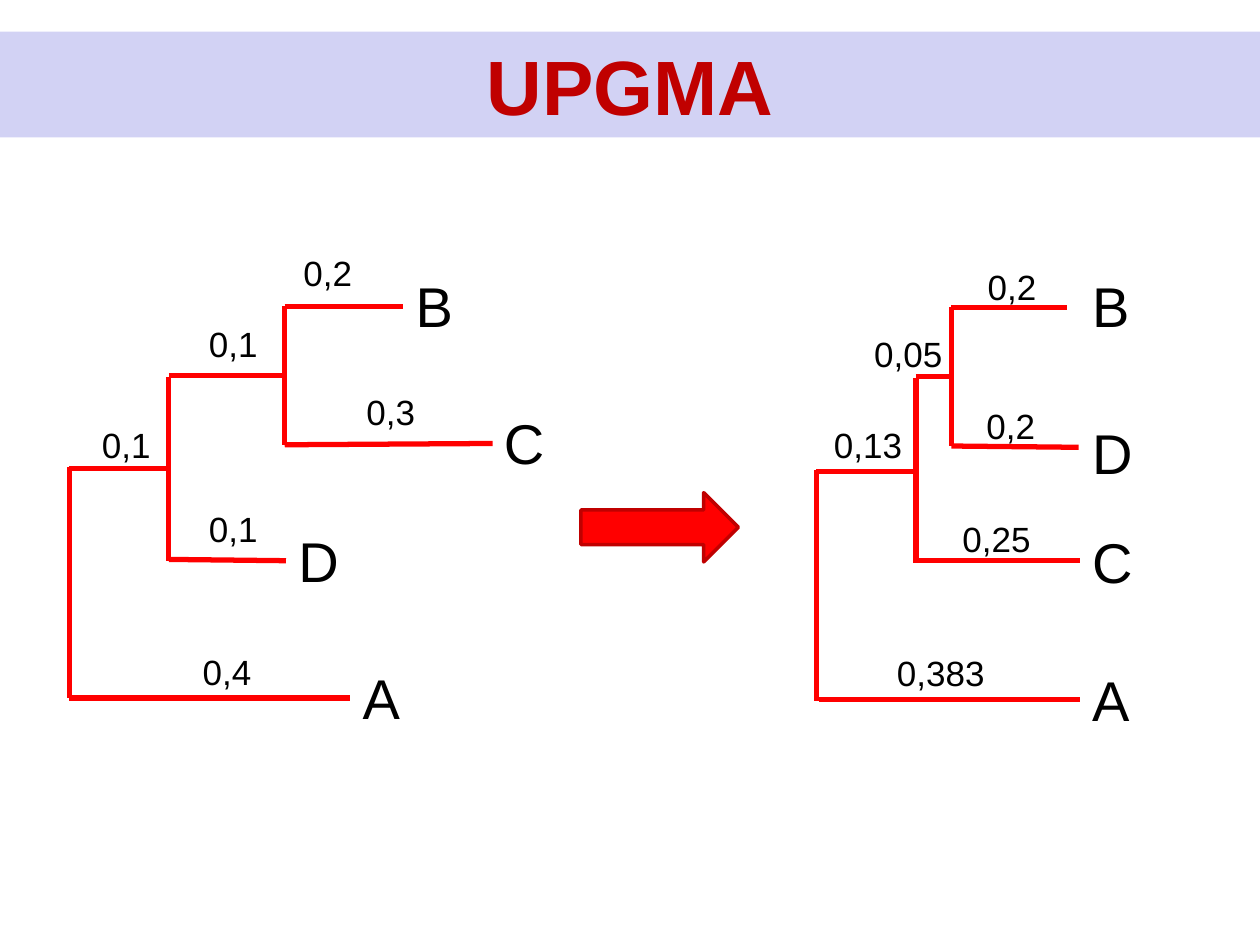
from lxml.etree import SubElement
from pptx import Presentation
from pptx.dml.color import RGBColor
from pptx.enum.shapes import MSO_CONNECTOR, MSO_SHAPE
from pptx.enum.text import MSO_ANCHOR, PP_ALIGN
from pptx.oxml.ns import qn
from pptx.util import Inches, Pt

COLORS = {"band": "D2D2F4", "title": "C00000", "branch": "FF0000", "text": "000000"}

LEFT_TREE = {
    "branches": [
        (2.26, 2.43, 3.2, 2.43), (2.26, 2.43, 2.26, 3.53), (2.26, 3.53, 3.91, 3.52),
        (1.34, 4.44, 2.27, 4.45), (1.34, 2.98, 2.26, 2.98), (1.34, 2.99, 1.34, 4.45),
        (0.55, 3.72, 1.34, 3.72), (0.55, 3.71, 0.55, 5.54), (0.55, 5.54, 2.78, 5.54),
    ],
    "leaves": [("C", 3.9, 3.19), ("B", 3.2, 2.11), ("D", 2.27, 4.13), ("A", 2.78, 5.22)],
    "lengths": [
        ("0,2", 2.31, 1.95, 0.59), ("0,3", 2.81, 3.05, 0.59), ("0,1", 1.56, 3.98, 0.59),
        ("0,1", 1.56, 2.51, 0.59), ("0,4", 1.51, 5.11, 0.59), ("0,1", 0.71, 3.31, 0.59),
    ],
}
RIGHT_TREE = {
    "branches": [
        (7.55, 2.44, 8.47, 2.44), (7.55, 2.44, 7.55, 3.54), (7.55, 3.54, 8.56, 3.55),
        (7.27, 4.45, 8.57, 4.45), (7.27, 2.99, 7.55, 2.99), (7.27, 3, 7.27, 4.47),
        (6.48, 3.74, 7.26, 3.74), (6.48, 3.73, 6.48, 5.56), (6.5, 5.55, 8.57, 5.55),
    ],
    "leaves": [("D", 8.57, 3.27), ("B", 8.57, 2.11), ("C", 8.57, 4.14), ("A", 8.57, 5.23)],
    "lengths": [
        ("0,2", 7.74, 2.06, 1.08), ("0,05", 6.84, 2.59, 1.37), ("0,383", 7.02, 5.12, 1.65),
        ("0,13", 6.52, 3.31, 1.37), ("0,2", 7.73, 3.16, 1.08), ("0,25", 7.54, 4.06, 1.37),
    ],
}


def rgb(name):
    """Return the named colour."""
    return RGBColor.from_string(COLORS[name])


def write(tf, text, size=20, color="text", bold=False, align=PP_ALIGN.LEFT):
    """Put one formatted paragraph into a text frame."""
    tf.word_wrap = True
    p = tf.paragraphs[0]
    p.alignment = align
    r = p.add_run()
    r.text = text
    r.font.name = "Arial"
    r.font.size = Pt(size)
    r.font.bold = bold
    r.font.color.rgb = rgb(color)


def add_title(s, text):
    """Set the title as a full-width band."""
    sp = s.shapes.title
    sp.left, sp.top, sp.width, sp.height = map(Inches, (0, 0.25, 10, 0.84))
    sp.fill.solid()
    sp.fill.fore_color.rgb = rgb("band")
    sp.text_frame.vertical_anchor = MSO_ANCHOR.MIDDLE
    write(sp.text_frame, text, size=44, color="title", bold=True, align=PP_ALIGN.CENTER)


def add_branch(s, ends):
    """Draw one tree branch."""
    line = s.shapes.add_connector(MSO_CONNECTOR.STRAIGHT, *map(Inches, ends))
    line.line.color.rgb = rgb("branch")
    line.line.width = Pt(3)
    SubElement(line._element.spPr, qn("a:effectLst"))


def add_label(s, text, x, y, w, h, **fmt):
    """Add a text box with one label."""
    sp = s.shapes.add_textbox(*map(Inches, (x, y, w, h)))
    write(sp.text_frame, text, **fmt)


def add_tree(s, tree):
    """Draw a tree with its leaf names and branch lengths."""
    for ends in tree["branches"]:
        add_branch(s, ends)
    for name, x, y in tree["leaves"]:
        add_label(s, name, x, y, 0.52, 0.64, size=32)
    for length, x, y, w in tree["lengths"]:
        add_label(s, length, x, y, w, 0.44)


def add_arrow(s):
    """Draw the block arrow between the trees."""
    sp = s.shapes.add_shape(MSO_SHAPE.RIGHT_ARROW, *map(Inches, (4.61, 3.91, 1.25, 0.55)))
    sp.shadow.inherit = False
    sp.fill.solid()
    sp.fill.fore_color.rgb = rgb("branch")
    sp.line.color.rgb = rgb("title")
    sp.line.width = Pt(2)


def main():
    """Build and save the slide."""
    prs = Presentation()
    prs.slide_width, prs.slide_height = Inches(10), Inches(7.5)
    s = prs.slides.add_slide(prs.slide_layouts[5])
    add_title(s, "UPGMA")
    add_tree(s, LEFT_TREE)
    add_arrow(s)
    add_tree(s, RIGHT_TREE)
    prs.save("out.pptx")


if __name__ == "__main__":
    main()
